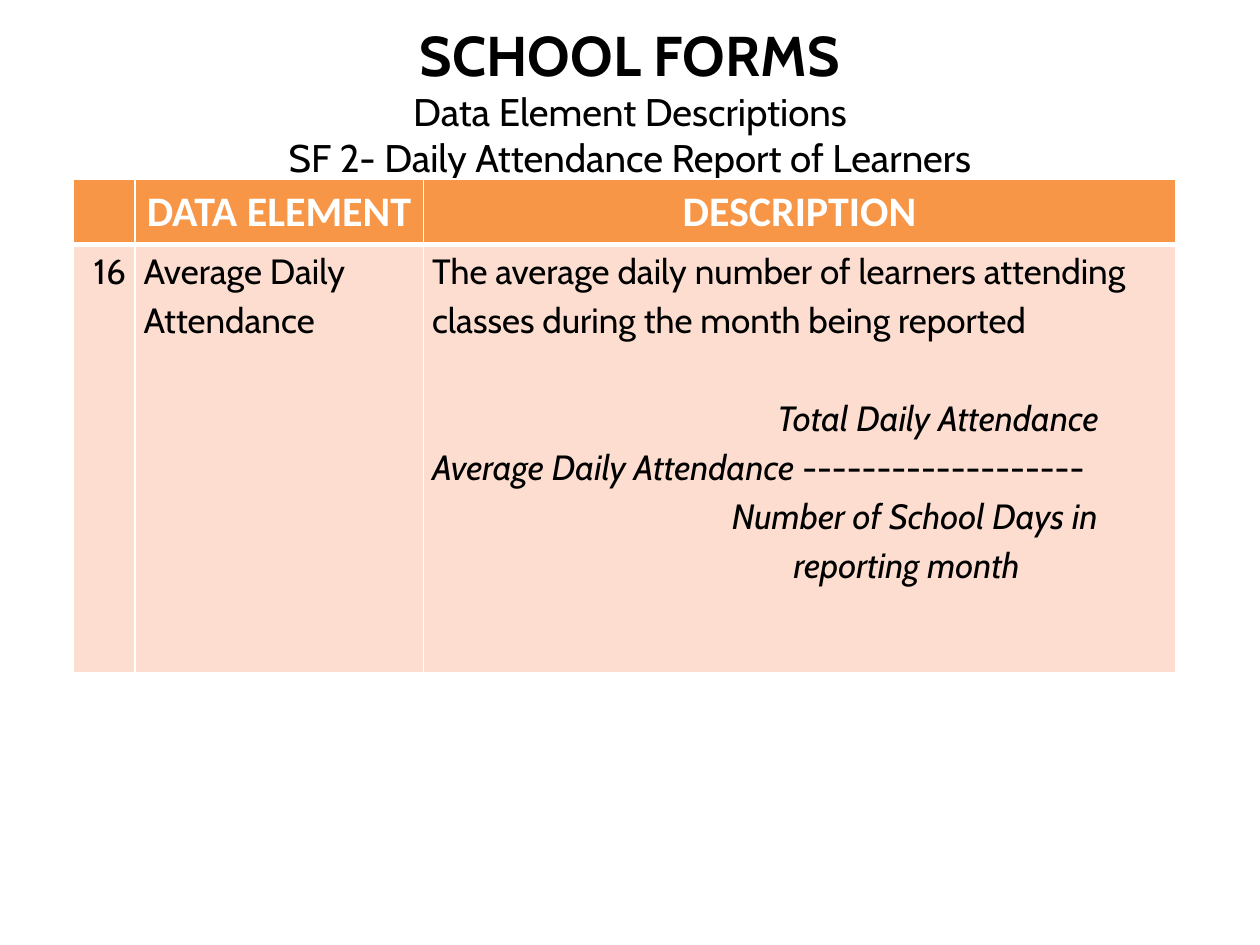
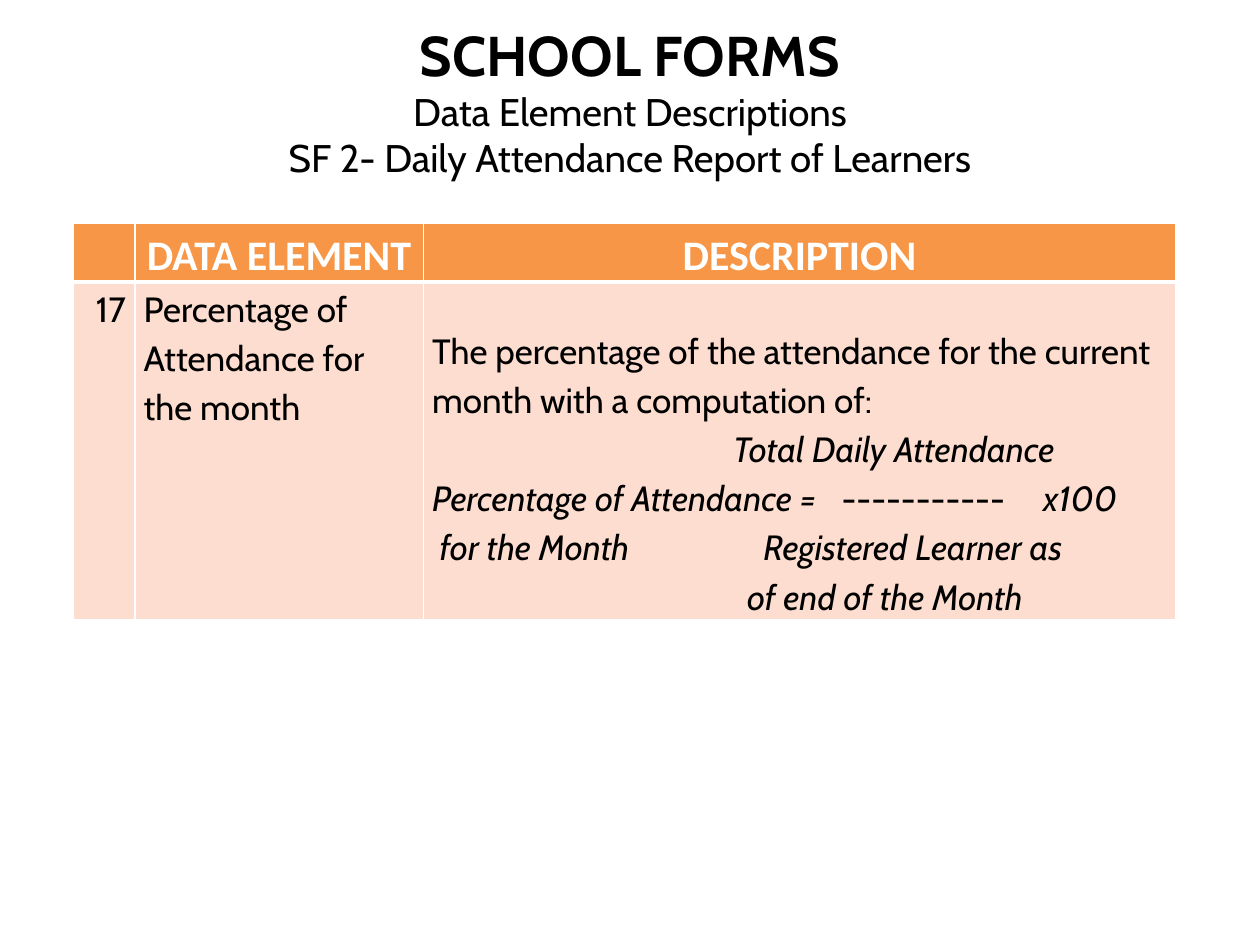
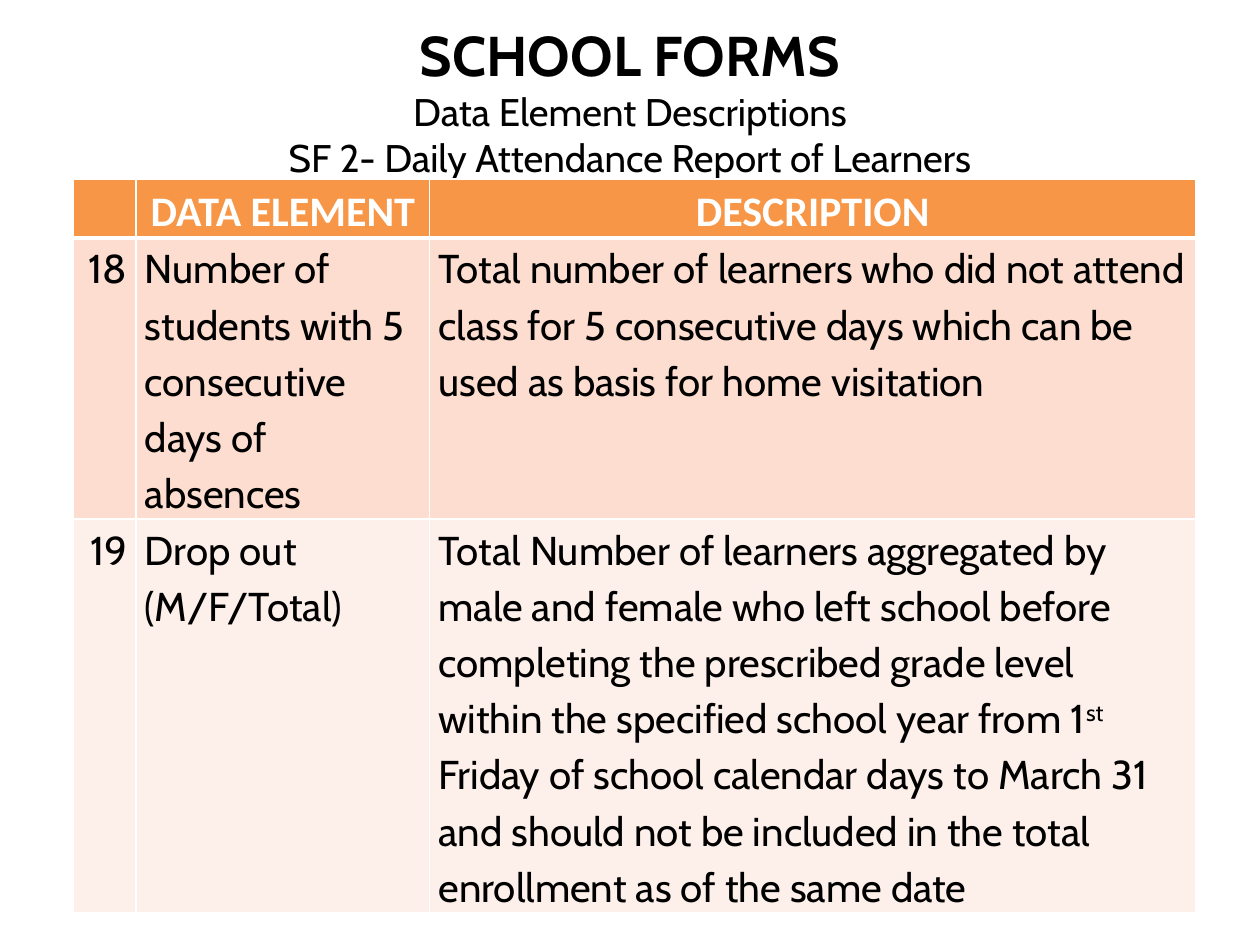
from lxml import etree
from pptx import Presentation
from pptx.dml.color import RGBColor
from pptx.enum.text import MSO_ANCHOR, MSO_AUTO_SIZE, PP_ALIGN
from pptx.oxml.ns import qn
from pptx.util import Inches, Pt

BLACK = RGBColor(0x00, 0x00, 0x00)
WHITE = RGBColor(0xFF, 0xFF, 0xFF)
ORANGE = RGBColor(0xF7, 0x96, 0x46)
BAND_FILLS = (RGBColor(0xFC, 0xDD, 0xCF), RGBColor(0xFD, 0xEF, 0xE9))
BODY_FONT, HEADER_FONT = "Cabin", "Calibri"
ALIGNMENTS = (PP_ALIGN.RIGHT, PP_ALIGN.LEFT, PP_ALIGN.LEFT)

TITLE = "SCHOOL FORMS"
SUBTITLES = ("Data Element Descriptions", "SF 2- Daily Attendance Report of Learners")
HEADER = ("", "DATA ELEMENT", "DESCRIPTION")
TABLE_LEFT = 0.58


def line(*runs, tabs=(), before=0):
    """One paragraph; each run is (text, style), where style is "", "italic" or "super"."""
    return {"runs": runs, "tabs": tabs, "before": before}


# Each row is (number, data element, description lines).
SLIDES = [
    {
        "top": 1.42, "columns": (0.49, 2.29, 5.97), "heights": (0.52, 3.4), "size": 20,
        "rows": [("16", "Average Daily Attendance", [
            line(("The average daily number of learners attending classes "
                  "during the month being reported", "")),
            line(("\tTotal Daily Attendance", "italic"), tabs=(2.74,), before=28),
            line(("Average Daily Attendance ", "italic"), ("-------------------", "")),
            line(("\tNumber of School Days in", "italic"), tabs=(2.38,)),
            line(("\treporting month", "italic"), tabs=(2.87,)),
        ])],
    },
    {
        "top": 1.77, "columns": (0.49, 2.29, 5.97), "heights": (0.46, 2.68), "size": 20,
        "description_inset": 0.34,
        "rows": [("17", "Percentage of Attendance for the month", [
            line(("The percentage of the attendance for the current month "
                  "with a computation of:", "")),
            line(("\tTotal Daily Attendance", "italic"), tabs=(2.39,)),
            line(("Percentage of Attendance =", "italic"), ("\t-----------", ""),
                 ("\tx100", "italic"), tabs=(3.25, 4.85)),
            line(("\tfor the Month\tRegistered Learner as", "italic"), tabs=(0.06, 2.63)),
            line(("\tof end of the Month", "italic"), tabs=(2.5,)),
        ])],
    },
    {
        "top": 1.42, "columns": (0.5, 2.33, 6.08), "heights": (0.46, 2.23, 3.12), "size": 23,
        "rows": [
            ("18", "Number of students with 5 consecutive days of absences", [
                line(("Total number of learners who did not attend class for 5 consecutive "
                      "days which can be used as basis for home visitation", "")),
            ]),
            ("19", "Drop out (M/F/Total)", [
                line(("Total Number of learners aggregated by male and female who left school "
                      "before completing the prescribed grade level within the specified "
                      "school year from 1", ""),
                     ("st", "super"),
                     (" Friday of school calendar days to March 31 and should not be included "
                      "in the total enrollment as of the same date", "")),
            ]),
        ],
    },
]


def add_run(paragraph, text, font_name, size, color, bold=False, style=""):
    run = paragraph.add_run()
    run.text = text
    font = run.font
    font.name, font.size, font.bold = font_name, Pt(size), bold
    font.color.rgb = color
    if style == "italic":
        font.italic = True
    elif style == "super":
        font._element.set("baseline", "30000")


def add_title(slide):
    box = slide.shapes.add_textbox(Inches(0.5), Inches(0.17), Inches(9), Inches(1.25))
    frame = box.text_frame
    frame.word_wrap = True
    frame.auto_size = MSO_AUTO_SIZE.NONE
    frame.vertical_anchor = MSO_ANCHOR.MIDDLE
    frame.margin_top = frame.margin_bottom = 0
    paragraph = frame.paragraphs[0]
    paragraph.alignment = PP_ALIGN.CENTER
    add_run(paragraph, TITLE, BODY_FONT, 32, BLACK, bold=True)
    for subtitle in SUBTITLES:
        paragraph.add_line_break()
        add_run(paragraph, subtitle, BODY_FONT, 22, BLACK)


def add_tab_stops(paragraph, positions):
    tab_list = etree.SubElement(paragraph._p.get_or_add_pPr(), qn("a:tabLst"))
    for position in positions:
        etree.SubElement(tab_list, qn("a:tab"), pos=str(Inches(position)), algn="l")


def style_cell(cell, fill, bottom_width=1):
    """Set white borders, then the fill, which must follow them in the XML."""
    properties = cell._tc.get_or_add_tcPr()
    for side, width in (("L", 1), ("R", 1), ("T", 1), ("B", bottom_width)):
        border = etree.SubElement(properties, qn(f"a:ln{side}"), w=str(Pt(width)))
        solid = etree.SubElement(border, qn("a:solidFill"))
        etree.SubElement(solid, qn("a:srgbClr"), val=str(WHITE))
    cell.fill.solid()
    cell.fill.fore_color.rgb = fill
    cell.margin_left = cell.margin_right = Inches(0.07)
    cell.margin_top = cell.margin_bottom = 0


def write_cell(cell, lines, alignment, **font):
    frame = cell.text_frame
    for index, content in enumerate(lines):
        paragraph = frame.add_paragraph() if index else frame.paragraphs[0]
        if content["tabs"]:
            add_tab_stops(paragraph, content["tabs"])
        paragraph.alignment = alignment
        paragraph.line_spacing = 1.15
        if content["before"]:
            paragraph.space_before = Pt(content["before"])
        for text, style in content["runs"]:
            add_run(paragraph, text, style=style, **font)


def add_element_table(slide, content):
    columns, heights = content["columns"], content["heights"]
    table = slide.shapes.add_table(
        len(heights), len(columns), Inches(TABLE_LEFT), Inches(content["top"]),
        Inches(sum(columns)), Inches(sum(heights))).table
    for column, width in zip(table.columns, columns):
        column.width = Inches(width)
    for row, height in zip(table.rows, heights):
        row.height = Inches(height)

    for index, heading in enumerate(HEADER):
        cell = table.cell(0, index)
        style_cell(cell, ORANGE, bottom_width=3)
        if heading:
            write_cell(cell, [line((heading, ""))], PP_ALIGN.CENTER,
                       font_name=HEADER_FONT, size=24, color=WHITE, bold=True)

    for row_index, (number, element, description) in enumerate(content["rows"], 1):
        cell_lines = ([line((number, ""))], [line((element, ""))], description)
        for index, (lines, alignment) in enumerate(zip(cell_lines, ALIGNMENTS)):
            cell = table.cell(row_index, index)
            style_cell(cell, BAND_FILLS[(row_index - 1) % 2])
            write_cell(cell, lines, alignment,
                       font_name=BODY_FONT, size=content["size"], color=BLACK)
        cell.margin_top = Inches(content.get("description_inset", 0))


def main():
    presentation = Presentation()
    presentation.slide_width, presentation.slide_height = Inches(10), Inches(7.5)
    for content in SLIDES:
        slide = presentation.slides.add_slide(presentation.slide_layouts[6])
        add_title(slide)
        add_element_table(slide, content)
    presentation.save("out.pptx")


if __name__ == "__main__":
    main()
